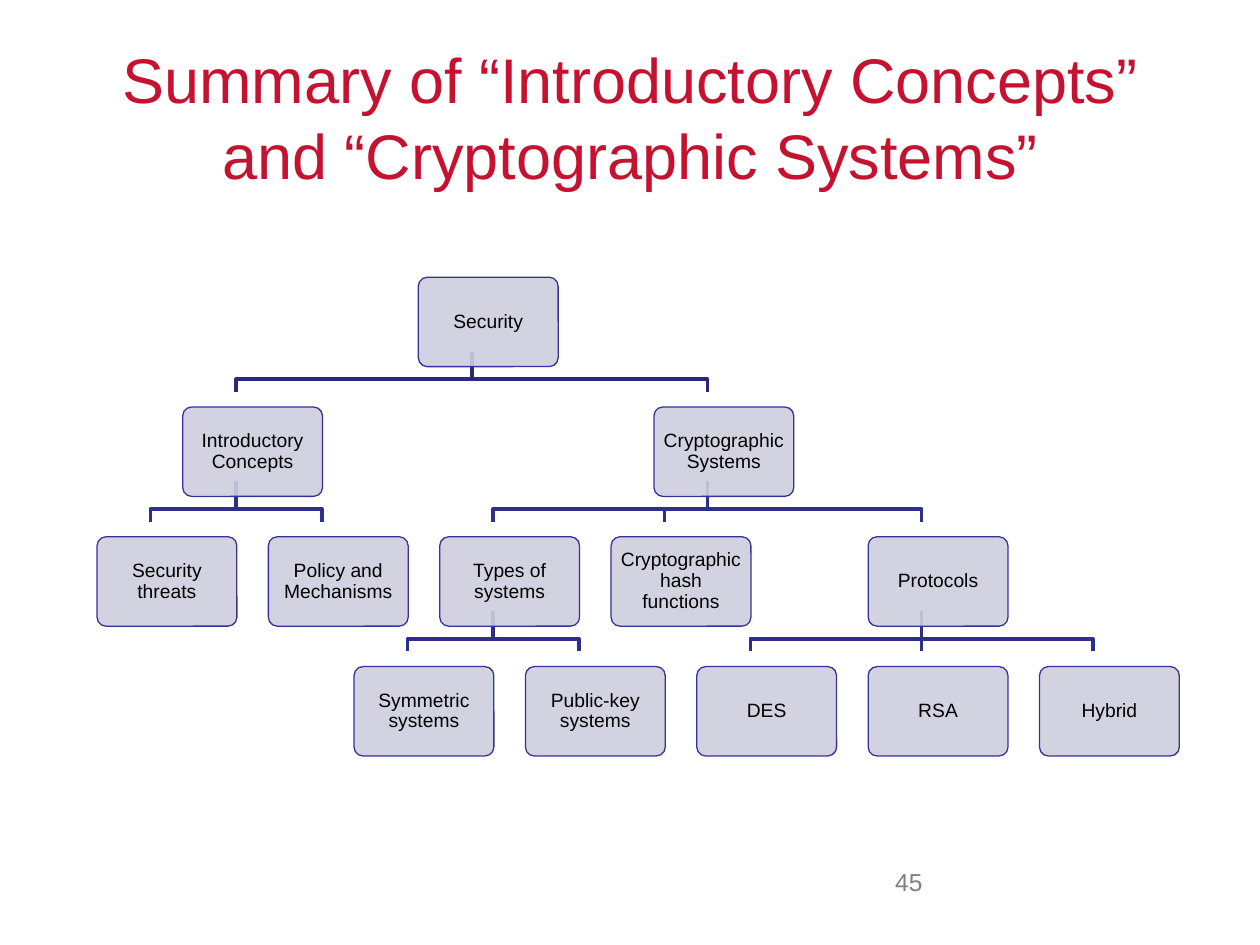
from dataclasses import dataclass

from lxml.etree import SubElement
from pptx import Presentation
from pptx.dml.color import RGBColor
from pptx.enum.shapes import MSO_CONNECTOR as Connector, MSO_SHAPE as Shape
from pptx.enum.text import MSO_ANCHOR as Anchor, PP_ALIGN as Align
from pptx.oxml.ns import qn
from pptx.util import Inches, Pt


@dataclass(frozen=True)
class Theme:
    font: str = "Arial"
    title: str = "C41230"
    text: str = "000000"
    number: str = "808080"
    backing: str = "FFFFFF"
    box: str = "CECEDE"
    border: str = "333399"
    root_link: str = "29297B"
    link: str = "2E2E8B"
    title_size: int = 36
    box_size: int = 11
    number_size: int = 14


@dataclass
class Topic:
    name: str
    column: float = 0
    children: tuple = ()
    level: int = 0
    backing: object = None

    @property
    def left(self):
        return LEFT + self.column * COLUMN_STEP

    @property
    def top(self):
        return TOP + self.level * ROW_STEP

    @property
    def middle(self):
        return self.left + BOX_WIDTH / 2


THEME = Theme()
LEFT, TOP = 0.64, 2.08
COLUMN_STEP, ROW_STEP = 0.68, 1.03
BOX_WIDTH, BOX_HEIGHT = 1.11, 0.71
OFFSET_X, OFFSET_Y = 0.13, 0.12
BOX_INSET = 0.04
BEND = 0.22

SECURITY = Topic("Security", children=(
    Topic("Introductory Concepts", children=(
        Topic("Security threats", 0),
        Topic("Policy and Mechanisms", 2),
    )),
    Topic("Cryptographic Systems", children=(
        Topic("Types of systems", children=(
            Topic("Symmetric systems", 3),
            Topic("Public-key systems", 5),
        )),
        Topic("Cryptographic hash functions", 6),
        Topic("Protocols", children=(
            Topic("DES", 7),
            Topic("RSA", 9),
            Topic("Hybrid", 11),
        )),
    )),
))


def color(value):
    return RGBColor.from_string(value)


def arrange(topic, level=0):
    topic.level = level
    topics = [topic]
    for child in topic.children:
        topics += arrange(child, level + 1)
    if topic.children:
        topic.column = (topic.children[0].column + topic.children[-1].column) / 2
    return topics


def write_text(shape, text, *, size, fill, align=Align.CENTER, anchor=Anchor.MIDDLE,
               inset=None, spacing=None):
    frame = shape.text_frame
    frame.word_wrap = True
    frame.vertical_anchor = anchor
    if inset is not None:
        frame.margin_left = frame.margin_right = Inches(inset)
        frame.margin_top = frame.margin_bottom = Inches(inset)
    paragraph = frame.paragraphs[0]
    paragraph.alignment = align
    if spacing:
        paragraph.line_spacing = spacing
    run = paragraph.add_run()
    run.text = text
    run.font.name = THEME.font
    run.font.size = Pt(size)
    run.font.color.rgb = color(fill)


def add_box(slide, left, top, fill):
    box = slide.shapes.add_shape(Shape.ROUNDED_RECTANGLE, Inches(left), Inches(top),
                                 Inches(BOX_WIDTH), Inches(BOX_HEIGHT))
    box.adjustments[0] = 0.1
    box.shadow.inherit = False
    box.fill.solid()
    box.fill.fore_color.rgb = color(fill)
    box.line.fill.background()
    return box


def add_topic_box(slide, topic):
    box = add_box(slide, topic.left + OFFSET_X, topic.top + OFFSET_Y, THEME.box)
    fill_color = box.fill._xPr.find(qn("a:solidFill"))[0]
    SubElement(fill_color, qn("a:alpha"), val="90000")
    box.line.color.rgb = color(THEME.border)
    box.line.width = Pt(0.75)
    write_text(box, topic.name, size=THEME.box_size, fill=THEME.text,
               inset=BOX_INSET, spacing=0.9)


def add_straight_link(slide, parent, child):
    link = slide.shapes.add_connector(Connector.STRAIGHT, 0, 0, 0, 0)
    link.begin_connect(parent.backing, 2)
    link.end_connect(child.backing, 0)
    SubElement(link._element.spPr, qn("a:effectLst"))
    return link


def add_bent_link(slide, parent, child):
    start = parent.top + BOX_HEIGHT
    points = [(parent.middle, start), (parent.middle, start + BEND),
              (child.middle, start + BEND), (child.middle, child.top)]
    corners = [(Inches(x), Inches(y)) for x, y in points]
    builder = slide.shapes.build_freeform(*corners[0])
    builder.add_line_segments(corners[1:], close=False)
    link = builder.convert_to_shape()
    link.fill.background()
    link.shadow.inherit = False
    return link


def add_link(slide, parent, child):
    straight = parent.column == child.column
    link = (add_straight_link if straight else add_bent_link)(slide, parent, child)
    link.line.color.rgb = color(THEME.link if parent.level else THEME.root_link)
    link.line.width = Pt(2)


def add_tree(slide, root):
    topics = arrange(root)
    for topic in topics[1:]:
        topic.backing = add_box(slide, topic.left, topic.top, THEME.backing)
    for topic in topics:
        for child in topic.children:
            add_link(slide, topic, child)
    for topic in topics:
        add_topic_box(slide, topic)


def add_title(slide, text):
    title = slide.shapes.title
    title.left, title.top = Inches(0.5), Inches(0.3)
    title.width, title.height = Inches(9), Inches(1.25)
    write_text(title, text, size=THEME.title_size, fill=THEME.title)


def add_page_number(slide, text):
    box = slide.shapes.add_textbox(Inches(6.5), Inches(6.83), Inches(0.92), Inches(0.52))
    write_text(box, text, size=THEME.number_size, fill=THEME.number,
               align=Align.RIGHT, anchor=Anchor.TOP)


def main():
    presentation = Presentation()
    presentation.slide_width, presentation.slide_height = Inches(10), Inches(7.5)
    slide = presentation.slides.add_slide(presentation.slide_layouts[5])
    add_title(slide, "Summary of “Introductory Concepts” and “Cryptographic Systems”")
    add_tree(slide, SECURITY)
    add_page_number(slide, "45")
    presentation.save("out.pptx")


if __name__ == "__main__":
    main()
